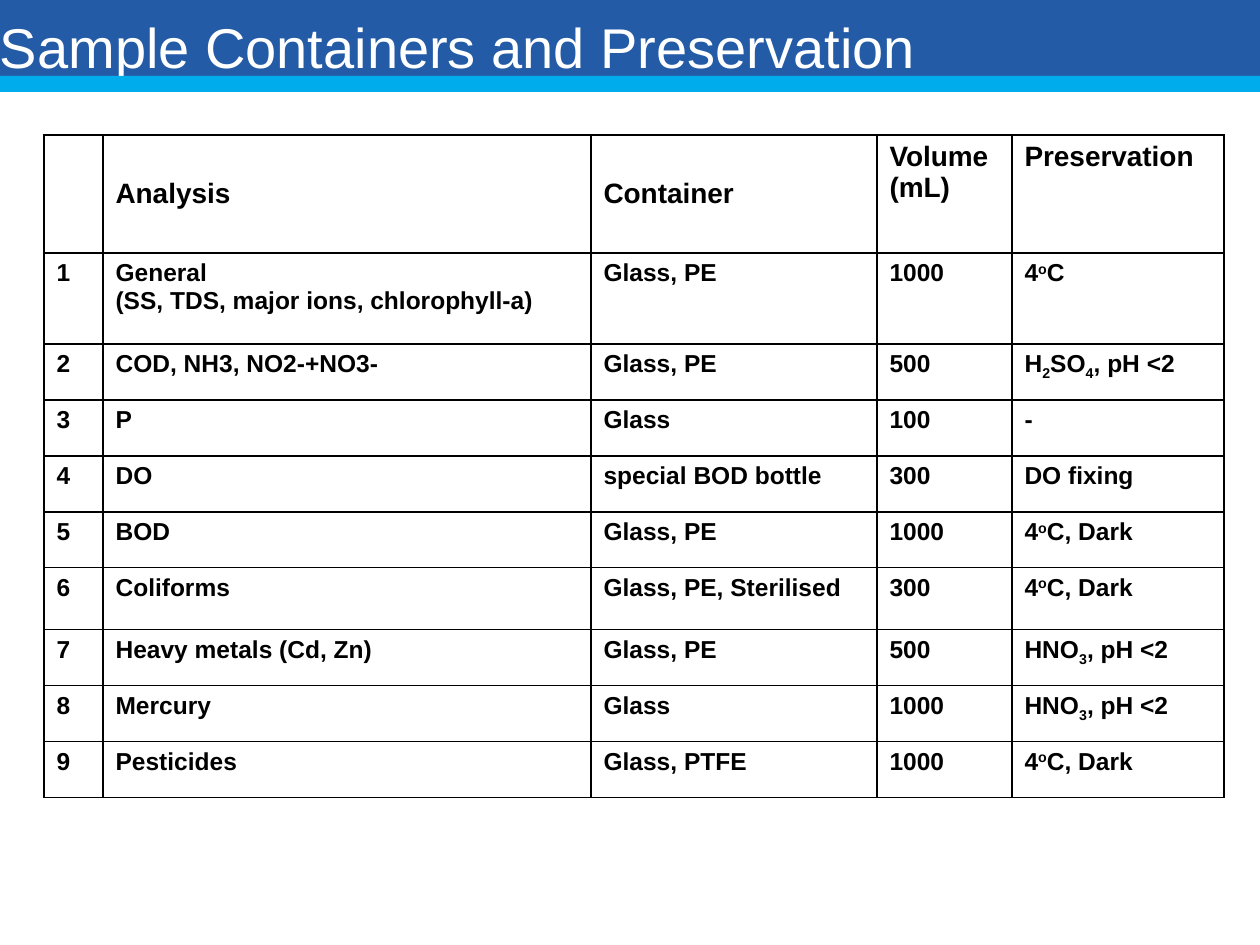
"""Build a slide listing sample containers and preservation methods."""
from dataclasses import dataclass

from lxml.etree import SubElement
from pptx import Presentation
from pptx.dml.color import RGBColor
from pptx.enum.shapes import MSO_SHAPE
from pptx.enum.text import MSO_ANCHOR, PP_ALIGN
from pptx.oxml.ns import qn
from pptx.util import Emu, Pt

EMU_PER_PX = 914400 / 126


@dataclass(frozen=True)
class Theme:
    """Hold the colours, font and type sizes."""
    banner: str = "245BA7"
    stripe: str = "00ACEB"
    paper: str = "FFFFFF"
    ink: str = "000000"
    font: str = "Arial"
    title_size: int = 32
    header_size: int = 16
    body_size: int = 14
    border_width: int = 1


THEME = Theme()
COLUMN_WIDTHS = [59, 488, 286, 135, 212]
ROW_HEIGHTS = [118, 91, 56, 56, 56, 56, 62, 56, 56, 56]
BASELINES = {"^": "30000", "_": "-25000"}
BORDER_TAGS = ["a:lnL", "a:lnR", "a:lnT", "a:lnB"]
HEADERS = ["", "Analysis", "Container", "Volume (mL)", "Preservation"]
SAMPLES = [
    ("General\n(SS, TDS, major ions, chlorophyll-a)", "Glass, PE", "1000", "4|^o|C"),
    ("COD, NH3, NO2-+NO3-", "Glass, PE", "500", "H|_2|SO|_4|, pH <2"),
    ("P", "Glass", "100", "-"),
    ("DO", "special BOD bottle", "300", "DO fixing"),
    ("BOD", "Glass, PE", "1000", "4|^o|C, Dark"),
    ("Coliforms", "Glass, PE, Sterilised", "300", "4|^o|C, Dark"),
    ("Heavy metals (Cd, Zn)", "Glass, PE", "500", "HNO|_3|, pH <2"),
    ("Mercury", "Glass", "1000", "HNO|_3|, pH <2"),
    ("Pesticides", "Glass, PTFE", "1000", "4|^o|C, Dark"),
]


def px(length):
    """Turn pixels into EMU."""
    return Emu(round(length * EMU_PER_PX))


def style_run(run, size, color, bold=False):
    """Apply the theme font to a run."""
    run.font.name = THEME.font
    run.font.size = Pt(size)
    run.font.bold = bold
    run.font.color.rgb = RGBColor.from_string(color)


def add_bar(slide, top, height, color):
    """Add a full-width filled rectangle."""
    shape = slide.shapes.add_shape(MSO_SHAPE.RECTANGLE, 0, px(top), px(1260), px(height))
    shape.shadow.inherit = False
    shape.fill.solid()
    shape.fill.fore_color.rgb = RGBColor.from_string(color)
    shape.line.fill.background()
    return shape


def write_title(shape, text):
    """Write the slide title into the banner."""
    frame = shape.text_frame
    frame.word_wrap = True
    frame.vertical_anchor = MSO_ANCHOR.TOP
    frame.margin_left = frame.margin_right = frame.margin_bottom = 0
    frame.margin_top = px(18)
    frame.text = text
    paragraph = frame.paragraphs[0]
    paragraph.alignment = PP_ALIGN.LEFT
    style_run(paragraph.runs[0], THEME.title_size, THEME.paper)


def write_marked_text(paragraph, text, size):
    """Write pieces split by bars, raising or lowering the marked ones."""
    for piece in text.split("|"):
        run = paragraph.add_run()
        run.text = piece.lstrip("^_")
        style_run(run, size, THEME.ink, bold=True)
        if piece[:1] in BASELINES:
            run.font._element.set("baseline", BASELINES[piece[0]])


def add_borders(cell):
    """Draw a solid line on all four sides of a cell."""
    properties = cell._tc.get_or_add_tcPr()
    for position, tag in enumerate(BORDER_TAGS):
        line = SubElement(properties, qn(tag), w=str(Pt(THEME.border_width)))
        fill = SubElement(line, qn("a:solidFill"))
        SubElement(fill, qn("a:srgbClr"), val=THEME.ink)
        properties.insert(position, line)


def fill_cell(cell, text, size):
    """Set the fill, borders and text of a cell."""
    cell.fill.solid()
    cell.fill.fore_color.rgb = RGBColor.from_string(THEME.paper)
    add_borders(cell)
    if not text:
        return
    frame = cell.text_frame
    for index, line in enumerate(text.split("\n")):
        paragraph = frame.add_paragraph() if index else frame.paragraphs[0]
        write_marked_text(paragraph, line, size)


def add_sample_table(slide):
    """Add the table of analyses, containers, volumes and preservation."""
    rows = [HEADERS] + [(str(number), *sample) for number, sample in enumerate(SAMPLES, 1)]
    table = slide.shapes.add_table(
        len(rows), len(HEADERS), px(44), px(135), px(sum(COLUMN_WIDTHS)), px(sum(ROW_HEIGHTS))
    ).table
    table.first_row = table.horz_banding = False
    for column, width in zip(table.columns, COLUMN_WIDTHS):
        column.width = px(width)
    for row_index, (row, height) in enumerate(zip(rows, ROW_HEIGHTS)):
        table.rows[row_index].height = px(height)
        size = THEME.body_size if row_index else THEME.header_size
        for column_index, text in enumerate(row):
            fill_cell(table.cell(row_index, column_index), text, size)
    for column_index in (1, 2):
        table.cell(0, column_index).vertical_anchor = MSO_ANCHOR.MIDDLE


def main():
    """Build and save the presentation."""
    presentation = Presentation()
    presentation.slide_width, presentation.slide_height = px(1260), px(945)
    slide = presentation.slides.add_slide(presentation.slide_layouts[6])
    write_title(add_bar(slide, -5, 86, THEME.banner), "Sample Containers and Preservation")
    add_bar(slide, 76, 16, THEME.stripe)
    add_sample_table(slide)
    presentation.save("out.pptx")


if __name__ == "__main__":
    main()
